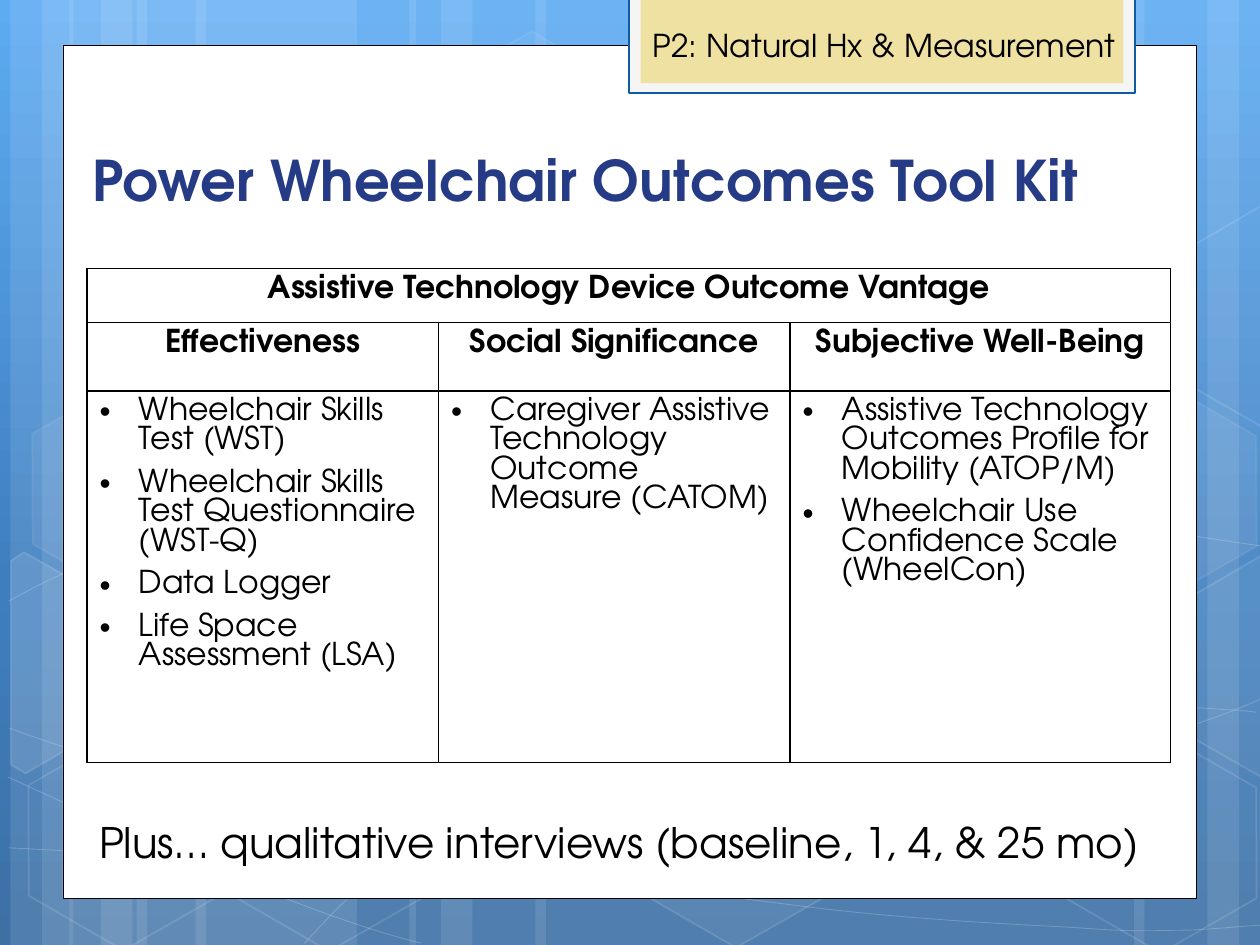
from copy import deepcopy
from math import cos, radians, sin

from lxml import etree
from pptx import Presentation
from pptx.dml.color import RGBColor
from pptx.enum.shapes import MSO_SHAPE
from pptx.enum.text import MSO_ANCHOR, PP_ALIGN
from pptx.oxml.ns import qn
from pptx.util import Pt

RECTANGLE, HEXAGON = MSO_SHAPE.RECTANGLE, MSO_SHAPE.HEXAGON
TOP, BOTTOM = MSO_ANCHOR.TOP, MSO_ANCHOR.BOTTOM
LEFT, CENTER = PP_ALIGN.LEFT, PP_ALIGN.CENTER

WHITE = RGBColor(0xFF, 0xFF, 0xFF)
BLACK = RGBColor(0x00, 0x00, 0x00)
NAVY = RGBColor(0x26, 0x3B, 0x86)
BLUE = RGBColor(0x10, 0x5C, 0xA4)
PALE_GRAY = RGBColor(0xF5, 0xF5, 0xF5)
SAND = RGBColor(0xEF, 0xE1, 0xA2)
SKY = [(0, RGBColor(0x5D, 0xAB, 0xF3)), (0.62, RGBColor(0x3E, 0x7E, 0xBF)),
       (1, RGBColor(0x3D, 0x70, 0xA5))]

PAGE_WIDTH, PAGE_HEIGHT = 720, 540
TILT = 30

# left, width
STRIPES = [(78, 126), (6, 36), (24, 60), (111.75, 126), (39.75, 36), (57.75, 60),
           (528, 126), (690, 36), (648, 60), (306, 222), (234, 36), (252, 60)]

# start point, then three points for each Bezier segment
WAVES = [
    [(5, 484.5), (44, 486.5), (83, 489), (137, 488), (191, 487.5), (258, 486),
     (330, 479), (402, 472), (504, 458.5), (570, 444), (636, 430.5),
     (703.5, 409), (725, 397)],
    [(5, 343.5), (26, 332), (47, 321), (87, 310), (128, 299.5), (186.5, 283.5),
     (250, 278.5), (314, 273.5), (392, 273), (471, 278.5), (550, 284.5),
     (682, 307), (725, 312.5)],
    [(4.5, 444), (91.5, 484), (178, 523.5), (240.5, 539)],
    [(5, 416), (27.5, 424), (50.5, 432), (92, 443.5), (134, 454.5),
     (196.5, 472.5), (257, 484.5), (317, 497), (392.5, 510), (452, 517),
     (512, 525), (576, 528), (614, 530), (651.5, 533), (661.5, 531.5),
     (680.5, 531.5), (699, 530.5), (712, 529), (725, 528.5)],
    [(174, 539), (187, 525), (200, 510.5), (217.5, 497.5), (235, 484.5),
     (259, 470), (279.5, 460), (299.5, 450), (312, 445.5), (338.5, 438.5),
     (364.5, 431), (412.5, 421), (438, 416), (463.5, 411), (467, 411),
     (489.5, 409.5), (512, 407.5), (547, 405.5), (571.5, 404.5),
     (597, 404), (638, 404.5), (638, 404.5), (654, 404.5), (670, 404.5),
     (686, 404.5), (699, 405.5), (711, 406), (718, 407)],
]

# left, top, fill opacity, line opacity
HEXAGONS = [(240.5, 26, 4, 8), (357.75, 424, 6, 12), (7.75, 425.5, 0, 12),
            (10, 224.5, 7, 8), (125.25, 426, 0, 12), (542.25, 326, 10, 12),
            (600.5, 427, 0, 12), (600.5, 226, 7, 8)]

# centre, corner points, fill opacity
CUT_HEXAGONS = [
    ((26, 385), [(6, 320.5), (13.5, 315.5), (69, 347), (68.5, 410.5),
                 (14.5, 442), (6, 437)], 10),
    ((709.25, 374.5), [(666.5, 349), (720.5, 317.5), (726.5, 321), (726.5, 441.5),
                       (721.5, 444), (666.5, 412.5)], 4),
    ((709.25, 173.5), [(666.5, 149), (720.5, 117.5), (727, 121), (726.5, 241),
                       (721.5, 244), (666.5, 212.5)], 0),
]

COLUMN_WIDTHS = [200.88, 200.88, 217.44]
ROW_HEIGHTS = [31, 39, 212.5]
TABLE_TITLE = "Assistive Technology Device Outcome Vantage"
VANTAGES = {
    "Effectiveness": [
        "Wheelchair Skills Test (WST)",
        "Wheelchair Skills Test Questionnaire (WST-Q)",
        "Data Logger",
        "Life Space Assessment (LSA)"],
    "Social Significance": [
        "Caregiver Assistive Technology Outcome Measure (CATOM)"],
    "Subjective Well-Being": [
        "Assistive Technology Outcomes Profile for Mobility (ATOP/M)",
        "Wheelchair Use Confidence Scale (WheelCon)"],
}


def untilt(point, center):
    """Turn a point back by TILT degrees around the centre."""
    x, y = point[0] - center[0], point[1] - center[1]
    c, s = cos(radians(TILT)), sin(radians(TILT))
    return center[0] + x * c + y * s, center[1] - x * s + y * c


class SlideWriter:
    font = "TeX Gyre Adventor"
    body_size = 18
    table_leading = 16.8
    bullet_gap = 7.5
    bullet_indent = 22.5

    def __init__(self, page):
        self.page = page

    def background(self, stops):
        fill = self.page.background.fill
        fill.gradient()
        fill.gradient_angle = 270
        first = fill.gradient_stops[0]._gs
        first.addnext(deepcopy(first))
        for stop, (position, color) in zip(fill.gradient_stops, stops):
            stop.position = position
            stop.color.rgb = color

    def set_opacity(self, fill, percent):
        color = fill._xPr.find(qn("a:solidFill"))[0]
        etree.SubElement(color, qn("a:alpha"), val=str(percent * 1000))

    def paint(self, shape, fill=None, fill_opacity=100,
              line=None, line_width=1, line_opacity=100):
        shape.shadow.inherit = False
        targets = ((shape.fill, fill, fill_opacity),
                   (shape.line.fill, line, line_opacity))
        for target, color, opacity in targets:
            if color is None or opacity == 0:
                target.background()
                continue
            target.solid()
            target.fore_color.rgb = color
            if opacity < 100:
                self.set_opacity(target, opacity)
        if line is not None:
            shape.line.width = Pt(line_width)

    def shape(self, kind, left, top, width, height, **style):
        shape = self.page.shapes.add_shape(kind, Pt(left), Pt(top), Pt(width), Pt(height))
        self.paint(shape, **style)
        return shape

    def outline(self, points, close, **style):
        corners = [(Pt(x), Pt(y)) for x, y in points]
        builder = self.page.shapes.build_freeform(*corners[0])
        builder.add_line_segments(corners[1:], close=close)
        shape = builder.convert_to_shape()
        self.paint(shape, **style)
        return shape

    def curve(self, points, **style):
        """Draw a chain of cubic Bezier segments."""
        shape = self.outline(points, False, **style)
        lines = list(shape._element.iter(qn("a:lnTo")))
        for start in range(0, len(lines), 3):
            segment = etree.Element(qn("a:cubicBezTo"))
            lines[start].addprevious(segment)
            for line in lines[start:start + 3]:
                segment.append(line[0])
                line.getparent().remove(line)

    def span(self, para, text, size, color=BLACK, bold=False):
        span = para.add_run()
        span.text = text
        span.font.name = self.font
        span.font.size = Pt(size)
        span.font.bold = bold
        span.font.color.rgb = color

    def text(self, text, left, top, width, height, size,
             color=BLACK, bold=False, anchor=TOP, wrap=True):
        box = self.page.shapes.add_textbox(Pt(left), Pt(top), Pt(width), Pt(height))
        box.text_frame.word_wrap = wrap
        box.text_frame.vertical_anchor = anchor
        self.span(box.text_frame.paragraphs[0], text, size, color, bold)

    def bullet(self, para):
        props = para._p.get_or_add_pPr()
        props.set("marL", str(Pt(self.bullet_indent)))
        props.set("indent", str(-Pt(self.bullet_indent)))
        etree.SubElement(props, qn("a:buFont"), typeface="Arial")
        etree.SubElement(props, qn("a:buChar"), char="•")

    def cell(self, cell, lines, heading):
        for index, line in enumerate(lines):
            frame = cell.text_frame
            para = frame.add_paragraph() if index else frame.paragraphs[0]
            para.alignment = CENTER if heading else LEFT
            para.line_spacing = Pt(self.table_leading)
            para.space_before = Pt(self.bullet_gap if index else 0)
            if not heading:
                self.bullet(para)
            self.span(para, line, self.body_size, bold=heading)

    def cell_border(self, cell):
        cell.fill.background()
        props = cell._tc.get_or_add_tcPr()
        for index, side in enumerate(("lnL", "lnR", "lnT", "lnB")):
            line = etree.Element(qn("a:" + side), w=str(Pt(1)))
            fill = etree.SubElement(line, qn("a:solidFill"))
            etree.SubElement(fill, qn("a:srgbClr"), val=str(BLACK))
            props.insert(index, line)

    def table(self, left, top, title, columns):
        frame = self.page.shapes.add_table(
            len(ROW_HEIGHTS), len(columns), Pt(left), Pt(top),
            Pt(sum(COLUMN_WIDTHS)), Pt(sum(ROW_HEIGHTS)))
        table = frame.table
        table.first_row = table.horz_banding = False
        for column, width in zip(table.columns, COLUMN_WIDTHS):
            column.width = Pt(width)
        for row, height in zip(table.rows, ROW_HEIGHTS):
            row.height = Pt(height)
        for cell in table.iter_cells():
            self.cell_border(cell)
        table.cell(0, 0).merge(table.cell(0, len(columns) - 1))
        self.cell(table.cell(0, 0), [title], heading=True)
        for index, (name, tools) in enumerate(columns.items()):
            self.cell(table.cell(1, index), [name], heading=True)
            self.cell(table.cell(2, index), tools, heading=False)


def draw_backdrop(writer):
    writer.background(SKY)
    for left, width in STRIPES:
        writer.shape(RECTANGLE, left, 0, width, PAGE_HEIGHT, fill=WHITE, fill_opacity=10)
    for wave in WAVES:
        writer.curve(wave, line=WHITE, line_width=0.5, line_opacity=20)
    for left, top, fill_opacity, line_opacity in HEXAGONS:
        hexagon = writer.shape(HEXAGON, left, top, 126, 109.5, fill=WHITE,
                               fill_opacity=fill_opacity, line=WHITE,
                               line_opacity=line_opacity)
        hexagon.rotation = TILT
        hexagon.adjustments[0] = 0.29
        hexagon.adjustments[1] = 1.15
    for center, corners, opacity in CUT_HEXAGONS:
        level = [untilt(corner, center) for corner in corners]
        writer.outline(level, True, fill=WHITE, fill_opacity=opacity,
                       line=WHITE, line_opacity=12).rotation = TILT


def main():
    deck = Presentation()
    deck.slide_width, deck.slide_height = Pt(PAGE_WIDTH), Pt(PAGE_HEIGHT)
    writer = SlideWriter(deck.slides.add_slide(deck.slide_layouts[6]))

    draw_backdrop(writer)
    writer.shape(RECTANGLE, 36, 26, 648, 487.25, fill=WHITE, line=BLACK, line_width=0.5)
    writer.shape(RECTANGLE, 359.25, -1.5, 289.5, 54.5, fill=PALE_GRAY, line=BLUE,
                 line_width=1.25)
    writer.shape(RECTANGLE, 366, -1.5, 276, 49, fill=SAND)
    writer.text("Power Wheelchair Outcomes Tool Kit", 45.75, 67.5, 628.5, 57.5, 32,
                color=NAVY, bold=True, anchor=BOTTOM)
    writer.table(49.68, 153.4, TABLE_TITLE, VANTAGES)
    writer.text("Plus… qualitative interviews (baseline, 1, 4, & 25 mo)",
                49.5, 463, 624, 36, 24)
    writer.text("P2: Natural Hx & Measurement", 366, 11.5, 282, 29, 18, wrap=False)
    deck.save("out.pptx")


if __name__ == "__main__":
    main()
